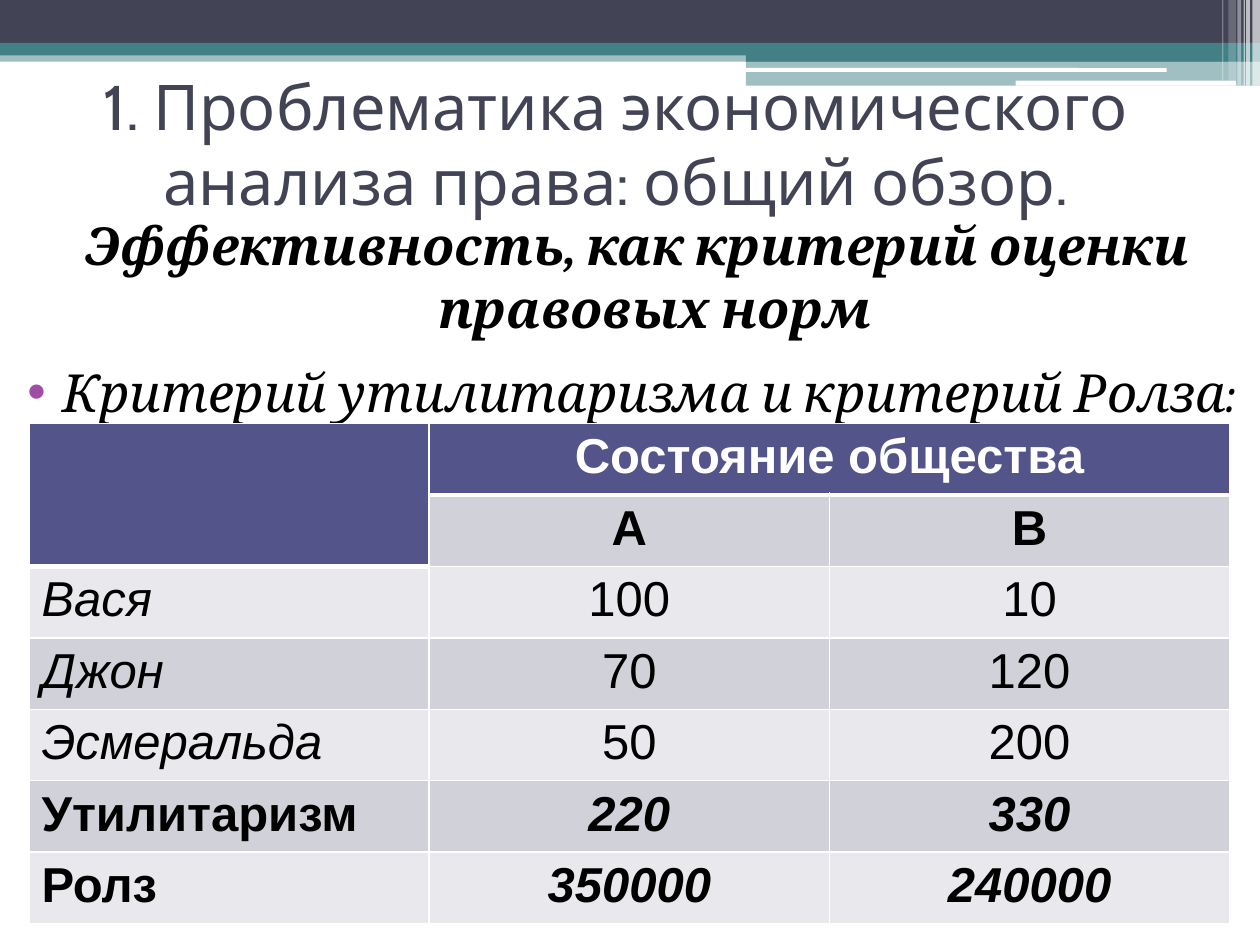
import pptx
import pptx.util
import pptx.dml.color
import pptx.enum.shapes
import pptx.enum.text
import pptx.oxml
import pptx.oxml.ns
from lxml import etree

Inches, Pt = pptx.util.Inches, pptx.util.Pt
SHAPE = pptx.enum.shapes.MSO_SHAPE
ALIGN = pptx.enum.text.PP_ALIGN
ANCHOR = pptx.enum.text.MSO_ANCHOR
qn = pptx.oxml.ns.qn

WIDTH, HEIGHT = 10, 7.5
WHITE, BLACK, SLATE, TEAL = "FFFFFF", "000000", "424456", "438086"
HEADER, DARK_BAND, LIGHT_BAND, BULLET = "53548A", "D1D1DA", "E9E9ED", "A04DA3"

# Left, top, width, height, colour, opacity in percent
BANDS = [
    (0, 0.4, WIDTH, 0.09, TEAL, 50),
    (0, 0, WIDTH, 0.34, SLATE, 100),
    (0, 0.34, WIDTH, 0.1, TEAL, 100),
    (5.92, 0.39, 4.08, 0.1, TEAL, 100),
    (5.92, 0.48, 4.08, 0.2, TEAL, 50),
]
RULES = [(5.91, 0.54, 3.35, 0.03), (8.06, 0.64, 1.75, 0.04)]
# Left, width, height, opacity in percent
STRIPES = [
    (9.94, 0.06, 0.68, 65), (9.89, 0.03, 0.68, 65), (9.87, 0.01, 0.68, 60),
    (9.82, 0.03, 0.68, 40), (9.75, 0.06, 0.64, 20), (9.7, 0.01, 0.64, 30),
]

# Name, values, (name bold, name italic), (values bold, values italic)
PLAIN, ITALIC, BOLD, BOLD_ITALIC = (False, False), (False, True), (True, False), (True, True)
WELFARE = [
    ("Вася", ("100", "10"), ITALIC, PLAIN),
    ("Джон", ("70", "120"), ITALIC, PLAIN),
    ("Эсмеральда", ("50", "200"), ITALIC, PLAIN),
    ("Утилитаризм", ("220", "330"), BOLD, BOLD_ITALIC),
    ("Ролз", ("350000", "240000"), BOLD, BOLD_ITALIC),
]


def colour(hex_code):
    return pptx.dml.color.RGBColor.from_string(hex_code)


def add_bar(slide, left, top, width, height, fill, opacity=100, kind=SHAPE.RECTANGLE):
    bar = slide.shapes.add_shape(
        kind, Inches(left), Inches(top), Inches(width), Inches(height))
    bar.shadow.inherit = False
    bar.fill.solid()
    bar.fill.fore_color.rgb = colour(fill)
    bar.line.fill.background()
    if opacity < 100:
        rgb = bar.fill._xPr.find(".//" + qn("a:srgbClr"))
        etree.SubElement(rgb, qn("a:alpha"), val=str(opacity * 1000))


def add_text_frame(slide, left, top, width, height, anchor):
    box = slide.shapes.add_textbox(
        Inches(left), Inches(top), Inches(width), Inches(height))
    box.text_frame.word_wrap = True
    box.text_frame.vertical_anchor = anchor
    return box.text_frame


def add_run(paragraph, text, font, size, hex_code, style=PLAIN):
    run = paragraph.add_run()
    run.text = text
    run.font.name = font
    run.font.size = Pt(size)
    run.font.bold, run.font.italic = style
    run.font.color.rgb = colour(hex_code)


def hang(paragraph, bullet=None):
    props = paragraph._p.get_or_add_pPr()
    props.set("marL", str(Inches(0.4)))
    props.set("indent", str(Inches(-0.28)))
    if bullet:
        bullet_colour = etree.SubElement(props, qn("a:buClr"))
        etree.SubElement(bullet_colour, qn("a:srgbClr"), val=BULLET)
        etree.SubElement(props, qn("a:buFont"), typeface="Arial")
        etree.SubElement(props, qn("a:buChar"), char=bullet)


def format_cell(cell, fill, bottom=1):
    props = cell._tc.get_or_add_tcPr()
    for side in ("L", "R", "T", "B"):
        weight = bottom if side == "B" else 1
        edge = etree.SubElement(props, qn("a:ln" + side), w=str(Pt(weight)))
        paint = etree.SubElement(edge, qn("a:solidFill"))
        etree.SubElement(paint, qn("a:srgbClr"), val=WHITE)
    cell.fill.solid()
    cell.fill.fore_color.rgb = colour(fill)


def write_cell(cell, text, style, align=ALIGN.CENTER, hex_code=BLACK):
    paragraph = cell.text_frame.paragraphs[0]
    paragraph.alignment = align
    add_run(paragraph, text, "Arial", 28, hex_code, style)


def add_welfare_table(slide):
    row_count, column_count, row_height = len(WELFARE) + 2, 3, 0.51
    table = slide.shapes.add_table(
        row_count, column_count, Inches(0.23), Inches(3.36),
        Inches(9.53), Inches(row_height * row_count)).table

    # Banding below the header, which also covers the corner's second row
    for row in range(row_count):
        for column in range(column_count):
            is_header = row == 0 or (row == 1 and column == 0)
            band = DARK_BAND if row % 2 else LIGHT_BAND
            format_cell(table.cell(row, column),
                        HEADER if is_header else band, 3 if is_header else 1)
    table.cell(0, 0).merge(table.cell(1, 0))
    table.cell(0, 1).merge(table.cell(0, 2))

    # Headings
    write_cell(table.cell(0, 1), "Состояние общества", BOLD, hex_code=WHITE)
    for column, state in enumerate(("А", "В"), start=1):
        write_cell(table.cell(1, column), state, BOLD)

    # People and criteria
    for row, (name, values, name_style, value_style) in enumerate(WELFARE, start=2):
        write_cell(table.cell(row, 0), name, name_style, ALIGN.LEFT)
        for column, value in enumerate(values, start=1):
            write_cell(table.cell(row, column), value, value_style)


def add_banner(slide):
    for band in BANDS:
        add_bar(slide, *band)
    for rule in RULES:
        add_bar(slide, *rule, WHITE, kind=SHAPE.ROUNDED_RECTANGLE)
    for left, width, height, opacity in STRIPES:
        add_bar(slide, left, 0, width, height, WHITE, opacity)


def add_heading(slide):
    heading = add_text_frame(slide, 0.39, 0.55, 9, 1.17, ANCHOR.MIDDLE).paragraphs[0]
    heading.alignment = ALIGN.CENTER
    add_run(heading, "1. Проблематика экономического анализа права: общий обзор.",
            "Cabin", 36, SLATE)


def add_criteria(slide):
    body = add_text_frame(slide, 0, 1.64, WIDTH, 5.86, ANCHOR.TOP)
    topic = body.paragraphs[0]
    topic.alignment = ALIGN.CENTER
    topic.space_before = Pt(3)
    hang(topic)
    add_run(topic, "Эффективность, как критерий оценки правовых норм",
            "Cambria", 30, BLACK, BOLD_ITALIC)

    criteria = body.add_paragraph()
    criteria.space_before = Pt(12)
    hang(criteria, "•")
    add_run(criteria, "Критерий утилитаризма и критерий Ролза:",
            "Cambria", 30, BLACK, ITALIC)


def main():
    deck = pptx.Presentation()
    deck.slide_width, deck.slide_height = Inches(WIDTH), Inches(HEIGHT)
    slide = deck.slides.add_slide(deck.slide_layouts[6])
    add_banner(slide)
    add_heading(slide)
    add_criteria(slide)
    add_welfare_table(slide)
    deck.save("out.pptx")


if __name__ == "__main__":
    main()
